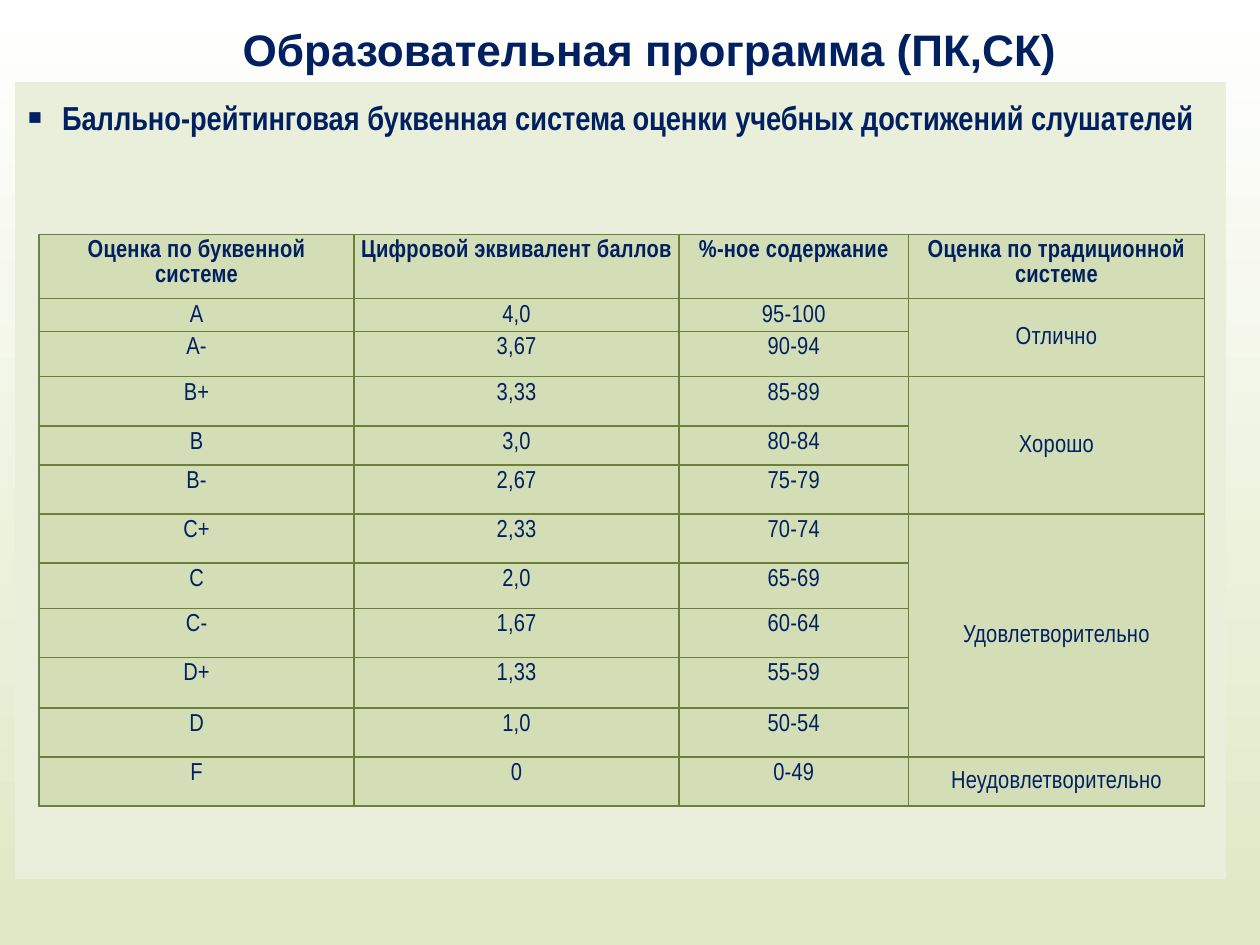
from lxml import etree
from pptx import Presentation
from pptx.dml.color import RGBColor
from pptx.enum import text as t
from pptx.oxml.ns import qn
from pptx.util import Pt

NAVY, PALE, GREEN, OLIVE = "002060", "EAEFDB", "D4DEB6", "6D7F39"

HEADS = ["Оценка по буквенной системе", "Цифровой эквивалент баллов",
         "%-ное содержание", "Оценка по традиционной системе"]
MARKS = [
    ("А", "4,0", "95-100"), ("А-", "3,67", "90-94"),
    ("В+", "3,33", "85-89"), ("В", "3,0", "80-84"), ("В-", "2,67", "75-79"),
    ("С+", "2,33", "70-74"), ("С", "2,0", "65-69"), ("С-", "1,67", "60-64"),
    ("D+", "1,33", "55-59"), ("D", "1,0", "50-54"), ("F", "0", "0-49"),
]
# Traditional grade and the number of rows it covers
GRADES = [("Отлично", 2), ("Хорошо", 3), ("Удовлетворительно", 5),
          ("Неудовлетворительно", 1)]
WIDTHS = [180, 185.76, 131.04, 169.2]
HEIGHTS = [36.72, 18.72, 25.92, 28.08, 22.32, 28.08, 28.08, 25.92,
           28.08, 28.8, 28.08, 28.08]


def color(code):
    return RGBColor.from_string(code)


def write(frame, words, size=14, font="Arial Narrow", bold=False,
          align=t.PP_ALIGN.CENTER, line=None, space=None):
    para = frame.paragraphs[0]
    para.alignment = align
    if line:
        para.line_spacing = Pt(line)
    run = para.add_run()
    run.text = words
    run.font.size, run.font.name, run.font.bold = Pt(size), font, bold
    run.font.color.rgb = color(NAVY)
    if space:
        run.font._element.set("spc", str(space))
    return para


def border(cell, edges):
    """Set the cell edges from {side: (colour, width)}; None means no line."""
    props = cell._tc.get_or_add_tcPr()
    for spot, side in enumerate("LRTB"):
        edge = edges.get(side)
        line = etree.Element(qn("a:ln" + side))
        if edge:
            line.set("w", str(Pt(edge[1])))
            fill = etree.SubElement(line, qn("a:solidFill"))
            etree.SubElement(fill, qn("a:srgbClr"), val=edge[0])
        else:
            etree.SubElement(line, qn("a:noFill"))
        props.insert(spot, line)


def style(cell, fill, edges, sides, ends):
    cell.fill.solid()
    cell.fill.fore_color.rgb = color(fill)
    cell.margin_left = cell.margin_right = Pt(sides)
    cell.margin_top = cell.margin_bottom = Pt(ends)
    border(cell, edges)


def grid(slide, left, top, widths, heights):
    frame = slide.shapes.add_table(len(heights), len(widths), Pt(left), Pt(top),
                                   Pt(sum(widths)), Pt(sum(heights)))
    table = frame.table
    table.first_row = table.horz_banding = False
    for col, width in zip(table.columns, widths):
        col.width = Pt(width)
    for row, height in zip(table.rows, heights):
        row.height = Pt(height)
    return table


def backdrop(slide):
    fill = slide.background.fill
    fill.gradient()
    fill.gradient_angle = 270
    for stop, code, place in zip(fill.gradient_stops, ("FFFFFF", "DFE8C4"), (0, 1)):
        stop.color.rgb = color(code)
        stop.position = place


def heading(slide):
    title = slide.shapes.title
    title.left, title.top = Pt(22.32), Pt(9.36)
    title.width, title.height = Pt(697.68), Pt(37.44)
    frame = title.text_frame
    frame.vertical_anchor = t.MSO_ANCHOR.MIDDLE
    frame.margin_top = frame.margin_bottom = 0
    write(frame, "Образовательная программа (ПК,СК)", size=25.2, font="Arial", bold=True)


def panel(slide):
    table = grid(slide, 8.64, 46.8, [691.92], [367.2, 88.56])
    for cell in table.iter_cells():
        style(cell, PALE, {}, 4.32, 0)
    cell = table.cell(0, 0)
    cell.margin_top = Pt(14)
    para = write(cell.text_frame,
                 "Балльно-рейтинговая буквенная система оценки учебных достижений слушателей",
                 size=19, bold=True, align=t.PP_ALIGN.LEFT)
    props = para._p.get_or_add_pPr()
    props.set("marL", str(Pt(22.5)))
    props.set("indent", str(-Pt(22.5)))
    etree.SubElement(props, qn("a:buChar"), char="▪")


def scale(slide):
    table = grid(slide, 22.32, 133.92, WIDTHS, HEIGHTS)
    look = {"line": 14.3, "space": 10}
    for row in range(len(HEIGHTS)):
        for col in range(len(WIDTHS)):
            edges = dict.fromkeys("LRTB", (OLIVE, 1))
            if col == 0:
                edges["L"] = ("6D804F", 0.75)
            style(table.cell(row, col), GREEN, edges, 3.6, 2.16)

    # Header and scores
    for row, words in enumerate([HEADS] + MARKS):
        for col, word in enumerate(words):
            write(table.cell(row, col).text_frame, word, bold=row == 0, **look)

    # Grades over merged rows
    row = 1
    for grade, span in GRADES:
        cell = table.cell(row, 3)
        if span > 1:
            cell.merge(table.cell(row + span - 1, 3))
        cell.vertical_anchor = t.MSO_ANCHOR.MIDDLE
        write(cell.text_frame, grade, **look)
        row += span


def main():
    deck = Presentation()
    deck.slide_width, deck.slide_height = Pt(720), Pt(540)
    slide = deck.slides.add_slide(deck.slide_layouts[5])
    backdrop(slide)
    heading(slide)
    panel(slide)
    scale(slide)
    deck.save("out.pptx")


if __name__ == "__main__":
    main()
